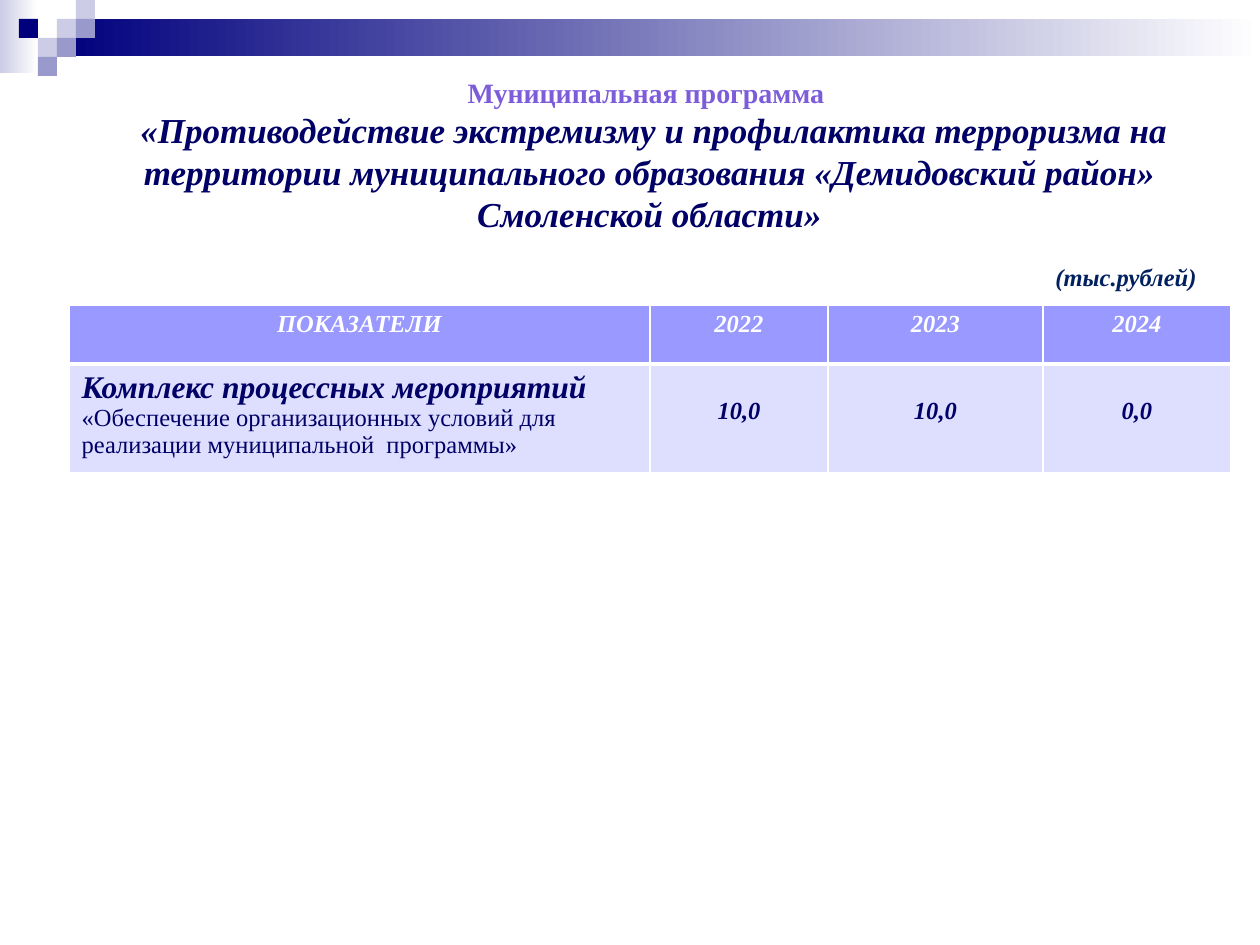
from dataclasses import dataclass

from lxml import etree
from pptx import Presentation
from pptx.dml.color import RGBColor
from pptx.enum.shapes import MSO_SHAPE
from pptx.enum.text import MSO_ANCHOR, MSO_AUTO_SIZE, PP_ALIGN
from pptx.oxml.ns import qn
from pptx.util import Emu, Pt

RECTANGLE = MSO_SHAPE.RECTANGLE
TOP = MSO_ANCHOR.TOP
NO_FIT = MSO_AUTO_SIZE.NONE
LEFT, CENTER = PP_ALIGN.LEFT, PP_ALIGN.CENTER
PX_PER_INCH = 126
TILE = 19
FONT = "Times New Roman"
COLORS = {
    "white": "FFFFFF",
    "navy": "00007D",
    "mist": "CCCCE6",
    "lavender": "9999CC",
    "violet": "7D5CDA",
    "ink": "000066",
    "unit": "002060",
    "header": "9999FF",
    "body": "DEDEFF",
}


@dataclass(frozen=True)
class Block:
    left: int
    top: int
    width: int
    height: int
    color: str
    fade: bool = False


@dataclass(frozen=True)
class Span:
    text: str
    size: int
    color: str
    bold: bool = True
    italic: bool = True


@dataclass(frozen=True)
class Entry:
    spans: tuple[Span, ...]
    align: PP_ALIGN = CENTER
    margin_top: int = 6


def px(value: int) -> Emu:
    return Emu(round(value * 914400 / PX_PER_INCH))


def rgb(name: str) -> RGBColor:
    return RGBColor.from_string(COLORS[name])


def tile(column: int, row: int, color: str) -> Block:
    return Block(column * TILE, row * TILE, TILE, TILE, color)


BLOCKS = (
    Block(0, 0, 38, 73, "mist", True),
    Block(3 * TILE, TILE, 1203, 37, "navy", True),
    tile(3, 1, "mist"),
    tile(4, 0, "mist"),
    tile(4, 1, "lavender"),
    tile(2, 2, "mist"),
    tile(1, 1, "navy"),
    tile(3, 2, "lavender"),
    tile(2, 3, "lavender"),
)
TITLE = (
    Span("Муниципальная программа ", 16, "violet", italic=False),
    Span(
        " «Противодействие экстремизму и профилактика терроризма на территории "
        "муниципального образования «Демидовский район» Смоленской области»",
        20,
        "ink",
    ),
)
COLUMN_WIDTHS = (581, 178, 215, 188)
ROW_HEIGHTS = (59, 109)
HEADINGS = ("ПОКАЗАТЕЛИ", "2022", "2023", "2024")
VALUES = ("10,0", "10,0", "0,0")
MEASURE = Entry(
    (
        Span("Комплекс процессных мероприятий ", 18, "ink"),
        Span(
            "«Обеспечение организационных условий для реализации "
            "муниципальной  программы»",
            14,
            "ink",
            bold=False,
            italic=False,
        ),
    ),
    LEFT,
)
ROWS = (
    [Entry((Span(text, 14, "white"),)) for text in HEADINGS],
    [MEASURE] + [Entry((Span(text, 14, "ink"),), margin_top=34) for text in VALUES],
)


def draw_block(page, block: Block) -> None:
    shape = page.shapes.add_shape(
        RECTANGLE, px(block.left), px(block.top), px(block.width), px(block.height)
    )
    shape.shadow.inherit = False
    shape.line.fill.background()
    if block.fade:
        shape.fill.gradient()
        shape.fill.gradient_angle = 0
        for stop, color in zip(shape.fill.gradient_stops, (block.color, "white")):
            stop.color.rgb = rgb(color)
    else:
        shape.fill.solid()
        shape.fill.fore_color.rgb = rgb(block.color)


def write_span(para, span: Span) -> None:
    run = para.add_run()
    run.text = span.text
    formats = {
        "name": FONT,
        "size": Pt(span.size),
        "bold": span.bold,
        "italic": span.italic,
    }
    for name, value in formats.items():
        setattr(run.font, name, value)
    run.font.color.rgb = rgb(span.color)


def write_title(page) -> None:
    box = page.shapes.title
    places = {"left": 39, "top": 69, "width": 1221, "height": 217}
    for name, value in places.items():
        setattr(box, name, px(value))
    frame = box.text_frame
    formats = {"word_wrap": True, "auto_size": NO_FIT, "vertical_anchor": TOP}
    for name, value in formats.items():
        setattr(frame, name, value)
    for index, span in enumerate(TITLE):
        para = frame.add_paragraph() if index else frame.paragraphs[0]
        para.alignment = CENTER
        write_span(para, span)


def add_border(cell, side: str, points: int) -> None:
    properties = cell._tc.get_or_add_tcPr()
    line = etree.SubElement(properties, qn(f"a:ln{side}"), w=str(Pt(points)))
    fill = etree.SubElement(line, qn("a:solidFill"))
    etree.SubElement(fill, qn("a:srgbClr"), val=COLORS["white"])


def fill_cell(cell, entry: Entry, is_header: bool) -> None:
    borders = {"L": 1, "R": 1, "T": 1, "B": 1}
    borders["B" if is_header else "T"] = 3
    for side, points in borders.items():
        add_border(cell, side, points)
    cell.fill.solid()
    cell.fill.fore_color.rgb = rgb("header" if is_header else "body")
    cell.margin_top = px(entry.margin_top)
    para = cell.text_frame.paragraphs[0]
    para.alignment = entry.align
    for span in entry.spans:
        write_span(para, span)


def draw_table(page) -> None:
    frame = page.shapes.add_table(
        len(ROWS),
        len(COLUMN_WIDTHS),
        px(69),
        px(305),
        px(sum(COLUMN_WIDTHS)),
        px(sum(ROW_HEIGHTS)),
    )
    table = frame.table
    for column, width in zip(table.columns, COLUMN_WIDTHS):
        column.width = px(width)
    for row_index, (row, height) in enumerate(zip(table.rows, ROW_HEIGHTS)):
        row.height = px(height)
        for cell, entry in zip(row.cells, ROWS[row_index]):
            fill_cell(cell, entry, row_index == 0)


def main() -> None:
    deck = Presentation()
    deck.slide_width, deck.slide_height = px(1260), px(945)
    page = deck.slides.add_slide(deck.slide_layouts[5])
    for block in BLOCKS:
        draw_block(page, block)
    write_title(page)
    draw_table(page)
    unit_box = page.shapes.add_textbox(px(1043), px(256), px(168), px(43))
    unit_box.text_frame.word_wrap = False
    write_span(unit_box.text_frame.paragraphs[0], Span("(тыс.рублей)", 14, "unit"))
    deck.save("out.pptx")


if __name__ == "__main__":
    main()
